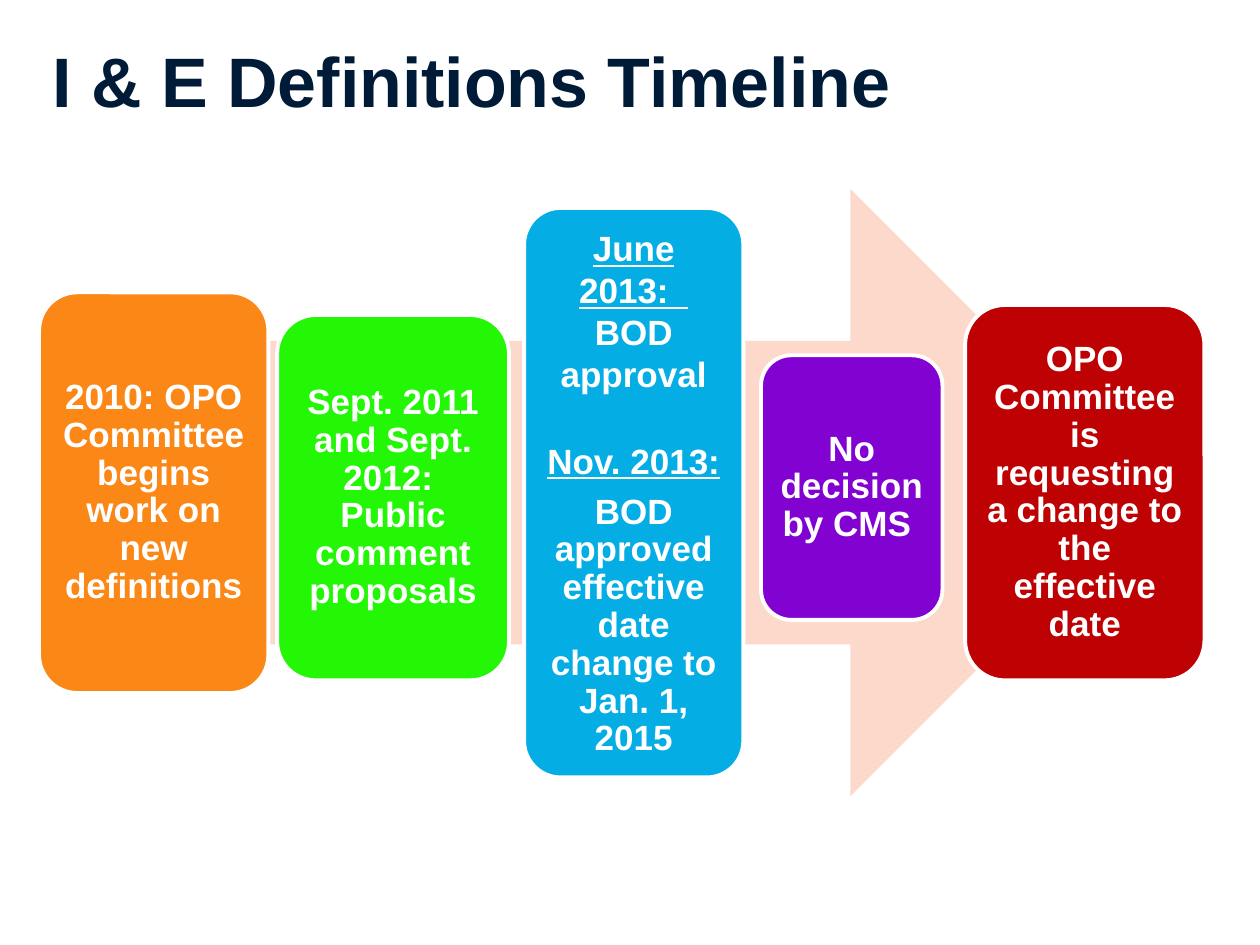
from dataclasses import dataclass

from pptx import Presentation
from pptx.dml.color import RGBColor
from pptx.enum.shapes import MSO_SHAPE
from pptx.enum.text import MSO_ANCHOR, PP_ALIGN
from pptx.util import Inches, Pt

RIGHT_ARROW = MSO_SHAPE.RIGHT_ARROW
ROUNDED = MSO_SHAPE.ROUNDED_RECTANGLE
MIDDLE = MSO_ANCHOR.MIDDLE
CENTER = PP_ALIGN.CENTER


@dataclass(frozen=True)
class Theme:
    font: str = "Arial"
    title_size: int = 40
    step_size: int = 20
    navy: str = "001B37"
    white: str = "FFFFFF"
    peach: str = "FDD9CC"
    orange: str = "FA8716"
    green: str = "24F705"
    blue: str = "04AEE4"
    purple: str = "8203D1"
    red: str = "BE0204"


theme = Theme()


def add_block(kind, bounds, color):
    block = slide.shapes.add_shape(kind, *map(Inches, bounds))
    block.shadow.inherit = False
    block.fill.solid()
    block.fill.fore_color.rgb = RGBColor.from_string(color)
    block.line.fill.background()
    return block


def style_font(paragraph, size, color):
    font = paragraph.font
    font.name = theme.font
    font.size = Pt(size)
    font.bold = True
    font.color.rgb = RGBColor.from_string(color)


deck = Presentation()
deck.slide_width = Inches(10)
deck.slide_height = Inches(7.5)
slide = deck.slides.add_slide(deck.slide_layouts[6])

add_block(RIGHT_ARROW, (1.03, 1.5, 8.13, 4.82), theme.peach)

# Each paragraph: text, underlined, line spacing, points after
steps = [
    ((0.31, 2.32, 1.82, 3.18), theme.orange,
     [("2010: OPO Committee begins work on new definitions", False, 0.9, 7)]),
    ((2.2, 2.5, 1.84, 2.9), theme.green,
     [("Sept. 2011 and Sept. 2012:  Public comment proposals", False, 0.9, 7)]),
    ((4.16, 1.65, 1.74, 4.52), theme.blue,
     [("June 2013:  ", True, 1.0, 0),
      ("BOD approval", False, 1.0, 28),
      ("Nov. 2013:", True, 0.9, 7),
      ("BOD approved effective date change to Jan. 1, 2015", False, 0.9, 7)]),
    ((6.04, 2.82, 1.44, 2.1), theme.purple,
     [("No decision by CMS ", False, 0.9, 7)]),
    ((7.66, 2.42, 1.9, 2.98), theme.red,
     [("OPO Committee is requesting a change to the effective date", False, 0.9, 7)]),
]

for bounds, color, lines in steps:
    step = add_block(ROUNDED, bounds, color)
    step.line.color.rgb = RGBColor.from_string(theme.white)
    step.line.width = Pt(2.25)
    frame = step.text_frame
    frame.word_wrap = True
    frame.vertical_anchor = MIDDLE
    frame.margin_left = frame.margin_right = Inches(0.08)
    frame.margin_top = frame.margin_bottom = Inches(0.08)
    for index, (text, underlined, spacing, after) in enumerate(lines):
        paragraph = frame.add_paragraph() if index else frame.paragraphs[0]
        paragraph.text = text
        paragraph.alignment = CENTER
        paragraph.line_spacing = spacing
        paragraph.space_after = Pt(after)
        style_font(paragraph, theme.step_size, theme.white)
        paragraph.font.underline = underlined

title = slide.shapes.add_textbox(Inches(0.32), Inches(0.17), Inches(9.56), Inches(0.93))
title.text_frame.word_wrap = True
title.text_frame.vertical_anchor = MIDDLE
heading = title.text_frame.paragraphs[0]
heading.text = "I & E Definitions Timeline"
style_font(heading, theme.title_size, theme.navy)

deck.save("out.pptx")
